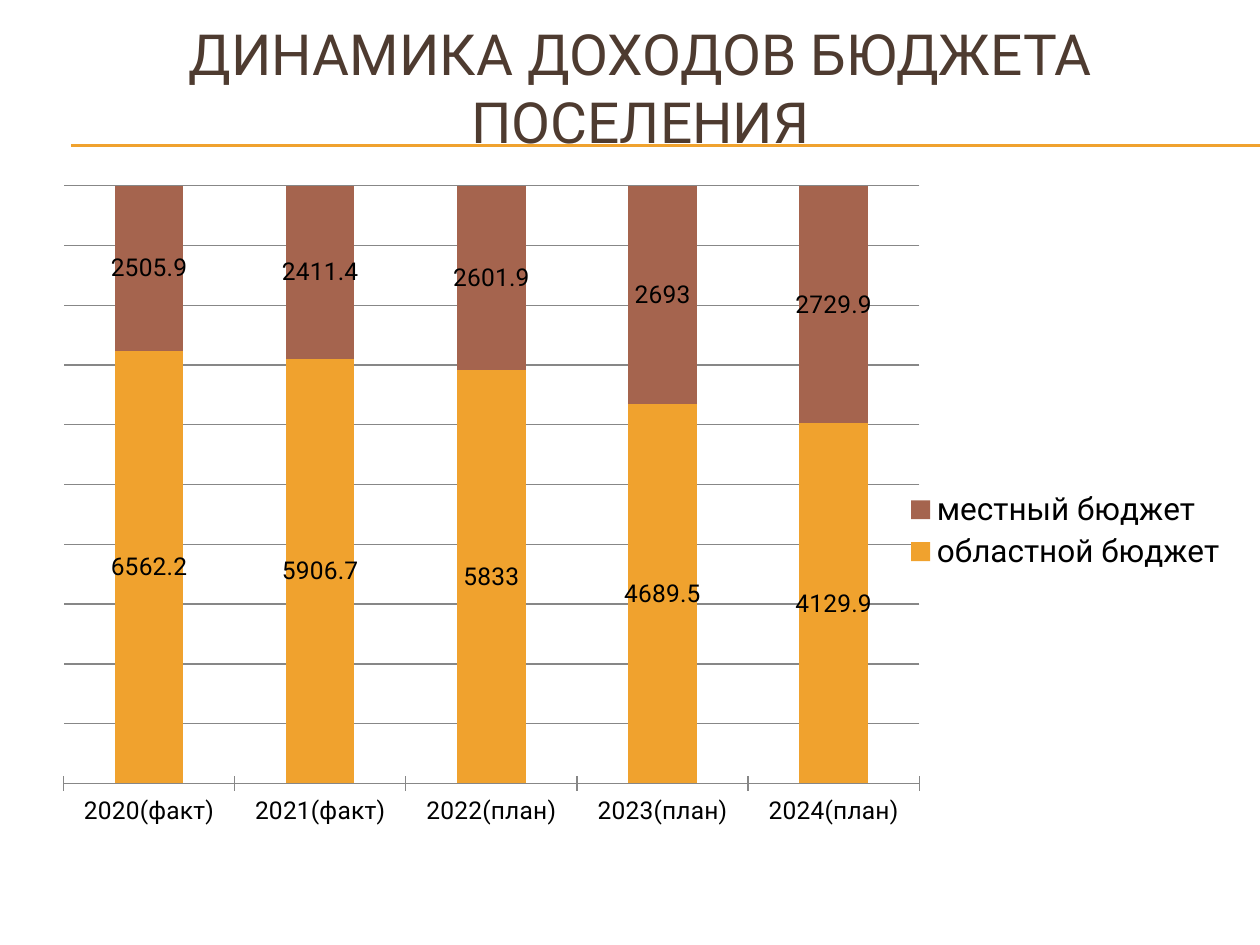
from lxml import etree
from pptx import Presentation
from pptx.chart.data import CategoryChartData
from pptx.dml.color import RGBColor
from pptx.enum.chart import XL_CHART_TYPE, XL_LABEL_POSITION, XL_LEGEND_POSITION, XL_TICK_MARK
from pptx.enum.shapes import MSO_CONNECTOR
from pptx.enum.text import MSO_ANCHOR, PP_ALIGN
from pptx.oxml import parse_xml
from pptx.oxml.ns import nsdecls, qn
from pptx.util import Pt

STACKED = XL_CHART_TYPE.COLUMN_STACKED_100
CENTER = XL_LABEL_POSITION.CENTER
RIGHT = XL_LEGEND_POSITION.RIGHT
CROSS, NO_TICK = XL_TICK_MARK.CROSS, XL_TICK_MARK.NONE
STRAIGHT = MSO_CONNECTOR.STRAIGHT
MIDDLE, MID = MSO_ANCHOR.MIDDLE, PP_ALIGN.CENTER

FONT = "Roboto"
GOLD, RUST, BROWN, GREY, BLACK = "F0A22E", "A5644E", "4E3B30", "878787", "000000"
YEARS = ["2020(факт)", "2021(факт)", "2022(план)", "2023(план)", "2024(план)"]
BUDGETS = [
    ("областной бюджет", GOLD, [6562.2, 5906.7, 5833, 4689.5, 4129.9]),
    ("местный бюджет", RUST, [2505.9, 2411.4, 2601.9, 2693, 2729.9]),
]


def px(n):
    return round(n * 914400 / 126)


def color(code):
    return RGBColor.from_string(code)


def style(font, size, code):
    font.name, font.size, font.bold = FONT, Pt(size), False
    font.color.rgb = color(code)


def outline(line, code):
    line.color.rgb = color(code)
    line.width = Pt(0.75)


def layout(part, before, x, y, w, h, inner=False):
    """Fix the place of a chart part, in fractions of the chart."""
    target = '<c:layoutTarget val="inner"/>' if inner else ""
    spots = "".join(f'<c:{k}Mode val="edge"/>' for k in "xy")
    sizes = "".join(f'<c:{k} val="{v}"/>' for k, v in zip("xywh", (x, y, w, h)))
    for old in part.findall(qn("c:layout")):
        part.remove(old)
    new = parse_xml(f'<c:layout {nsdecls("c")}><c:manualLayout>{target}{spots}{sizes}'
                    "</c:manualLayout></c:layout>")
    part.find(qn(before)).addprevious(new)


def add_rule(slide, x, y, w):
    # Double rule under the title
    for top in (y, y + 1):
        rule = slide.shapes.add_connector(STRAIGHT, px(x), px(top), px(x + w), px(top))
        outline(rule.line, GOLD)
        etree.SubElement(rule._element.spPr, qn("a:effectLst"))


def add_title(slide, x, y, w, h):
    frame = slide.shapes.add_textbox(px(x), px(y), px(w), px(h)).text_frame
    frame.word_wrap = True
    frame.vertical_anchor = MIDDLE
    # The deep bottom inset lifts the text by half a line
    frame.margin_bottom = px(74)
    frame.text = "ДИНАМИКА ДОХОДОВ БЮДЖЕТА ПОСЕЛЕНИЯ"
    para = frame.paragraphs[0]
    para.alignment = MID
    style(para.runs[0].font, 32.4, BROWN)


def add_budget(slide, x, y, w, h):
    data = CategoryChartData()
    data.categories = YEARS
    for name, _, vals in BUDGETS:
        data.add_series(name, vals)
    chart = slide.shapes.add_chart(STACKED, px(x), px(y), px(w), px(h), data).chart
    chart.has_title = False
    style(chart.font, 18, BLACK)

    # Columns and their labels
    plot = chart.plots[0]
    plot.gap_width, plot.overlap = 150, 100
    for series, (_, code, _) in zip(plot.series, BUDGETS):
        series.format.fill.solid()
        series.format.fill.fore_color.rgb = color(code)
        labels = series.data_labels
        labels.show_value = True
        labels.position = CENTER
        style(labels.font, 14, BLACK)

    # Axes
    years, share = chart.category_axis, chart.value_axis
    years.major_tick_mark = CROSS
    years.minor_tick_mark = NO_TICK
    style(years.tick_labels.font, 14, BLACK)
    outline(years.format.line, GREY)
    share.minimum_scale, share.maximum_scale, share.major_unit = 0, 1, 0.1
    share.has_major_gridlines = True
    outline(share.major_gridlines.format.line, GREY)
    share.visible = False

    # Legend and plot area
    chart.has_legend = True
    legend = chart.legend
    legend.position = RIGHT
    legend.include_in_layout = False
    style(legend.font, 18, BLACK)
    layout(legend._element, "c:overlay", 0.72, 0.44, 0.27, 0.13)
    area = chart._chartSpace.chart.plotArea
    layout(area, "c:barChart", 0.018, 0, 0.715, 0.875, inner=True)


def main():
    deck = Presentation()
    deck.slide_width, deck.slide_height = px(1260), px(945)
    slide = deck.slides.add_slide(deck.slide_layouts[6])
    add_rule(slide, 71, 145, 1189)
    add_title(slide, 42, 63, 1197, 116)
    add_budget(slide, 42, 185, 1197, 684)
    deck.save("out.pptx")


if __name__ == "__main__":
    main()
